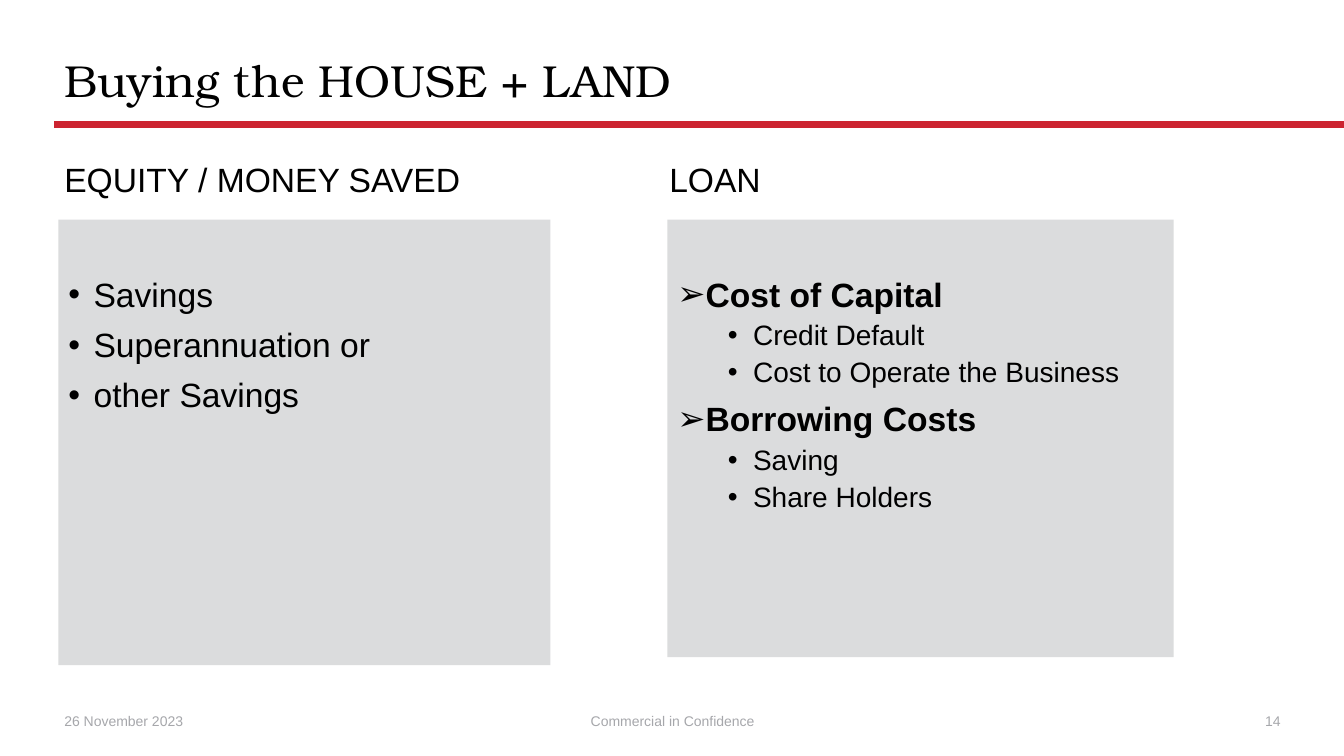
"""Build the slide on equity and loan as two ways to buy a house and land."""
from dataclasses import dataclass

from lxml.etree import SubElement as Sub
from pptx import Presentation as Deck
from pptx.dml.color import RGBColor as Color
from pptx.enum.shapes import MSO_CONNECTOR as Link, MSO_SHAPE as Form
from pptx.enum.text import MSO_ANCHOR as Anchor, PP_ALIGN as Align
from pptx.oxml.ns import qn
from pptx.util import Inches, Pt

INK = {"text": "000000", "rule": "CC2430", "foot": "A6A7AB", "panel": "DBDCDD"}
SANS, SERIF = "Arial", "TeX Gyre Bonum"


@dataclass
class Area:
    left: float
    top: float
    width: float
    height: float

    def sides(self) -> list:
        return [Inches(n) for n in (self.left, self.top, self.width, self.height)]


@dataclass
class Item:
    text: str
    mark: str = "•"
    size: int = 24
    bold: bool = False
    left: float = 0.25
    space: int = 10


@dataclass
class Panel:
    area: Area
    items: list[Item]


@dataclass
class Foot:
    text: str
    area: Area
    align: Align


def head(text: str) -> Item:
    return Item(text, mark="➢", bold=True)


def sub(text: str) -> Item:
    return Item(text, size=20, left=0.75, space=5)


PANELS = [
    Panel(Area(0.58, 2.18, 4.88, 4.42),
          [Item("Savings"), Item("Superannuation or"), Item("other Savings")]),
    Panel(Area(6.62, 2.18, 5.02, 4.34),
          [head("Cost of Capital"), sub("Credit Default"),
           sub("Cost to Operate the Business"),
           head("Borrowing Costs"), sub("Saving"), sub("Share Holders")]),
]
FEET = [
    Foot("26 November 2023", Area(0.54, 6.95, 3, 0.4), Align.LEFT),
    Foot("Commercial in Confidence", Area(4.42, 6.95, 4.5, 0.4), Align.CENTER),
    Foot("14", Area(9.8, 6.95, 3, 0.4), Align.RIGHT),
]


def write(para, text: str, *, size: int = 24, face: str = SANS, ink: str = "text",
          bold: bool = False, align: Align = Align.LEFT, lines: float = 0.9) -> None:
    para.alignment, para.line_spacing = align, lines
    run = para.add_run()
    run.text = text
    font = run.font
    font.size, font.name, font.bold = Pt(size), face, bold
    font.color.rgb = Color.from_string(INK[ink])


def add_text(slide, area: Area, text: str, anchor: Anchor = Anchor.MIDDLE, **style):
    frame = slide.shapes.add_textbox(*area.sides()).text_frame
    frame.word_wrap, frame.vertical_anchor = True, anchor
    write(frame.paragraphs[0], text, **style)
    return frame.paragraphs[0]


def set_mark(para, item: Item) -> None:
    props = para._p.get_or_add_pPr()
    props.set("marL", str(Inches(item.left)))
    props.set("indent", str(-Inches(0.25)))
    Sub(props, qn("a:buFont"), typeface=SANS)
    Sub(props, qn("a:buChar"), char=item.mark)


def add_panel(slide, panel: Panel) -> None:
    shape = slide.shapes.add_shape(Form.RECTANGLE, *panel.area.sides())
    shape.shadow.inherit = False
    shape.fill.solid()
    shape.fill.fore_color.rgb = Color.from_string(INK["panel"])
    shape.line.fill.background()
    frame = shape.text_frame
    frame.word_wrap, frame.vertical_anchor = True, Anchor.TOP
    frame.margin_top = Inches(0.58)
    for num, item in enumerate(panel.items):
        para = frame.add_paragraph() if num else frame.paragraphs[0]
        if num:
            para.space_before = Pt(item.space)
        write(para, item.text, size=item.size, bold=item.bold)
        set_mark(para, item)


def add_rule(slide) -> None:
    rule = slide.shapes.add_connector(
        Link.STRAIGHT, Inches(0.54), Inches(1.24), Inches(13.33), Inches(1.24))
    rule.line.color.rgb = Color.from_string(INK["rule"])
    rule.line.width = Pt(5)
    Sub(rule._element.spPr, qn("a:effectLst"))


def main() -> None:
    deck = Deck()
    deck.slide_width, deck.slide_height = Inches(13.33), Inches(7.5)
    slide = deck.slides.add_slide(deck.slide_layouts[6])
    add_rule(slide)
    for foot in FEET:
        add_text(slide, foot.area, foot.text, size=10, ink="foot",
                 align=foot.align, lines=1.0)
    add_text(slide, Area(0.54, 0.4, 12.26, 0.84), "Buying the HOUSE + LAND",
             size=32, face=SERIF)
    para = add_text(slide, Area(0.54, 1.57, 12.26, 5.19),
                    "EQUITY / MONEY SAVED\tLOAN", Anchor.TOP)
    tabs = Sub(para._p.get_or_add_pPr(), qn("a:tabLst"))
    Sub(tabs, qn("a:tab"), pos=str(Inches(6)), algn="l")
    for panel in PANELS:
        add_panel(slide, panel)
    deck.save("out.pptx")


if __name__ == "__main__":
    main()
